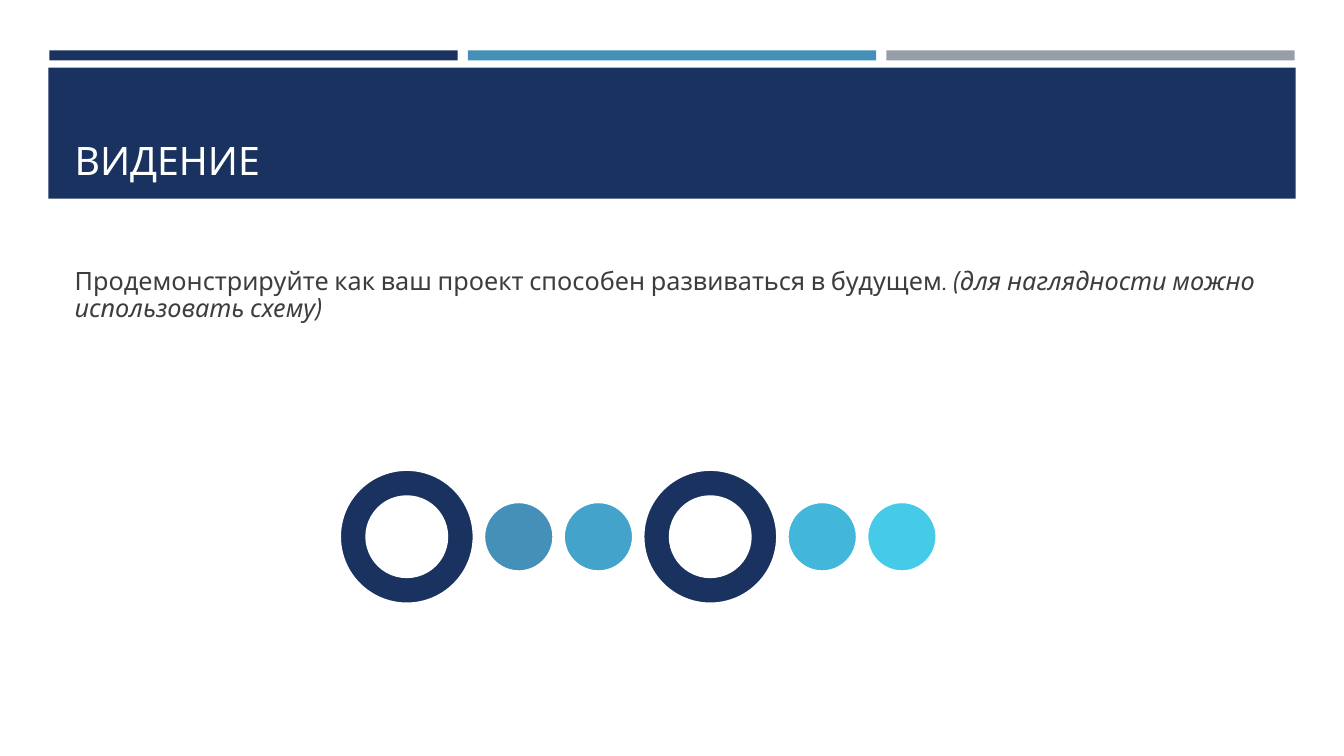
from dataclasses import dataclass

from pptx import Presentation
from pptx.dml.color import RGBColor
from pptx.enum.shapes import MSO_SHAPE
from pptx.enum.text import MSO_ANCHOR, MSO_AUTO_SIZE, PP_ALIGN
from pptx.util import Inches, Pt

RECTANGLE, DONUT, OVAL = MSO_SHAPE.RECTANGLE, MSO_SHAPE.DONUT, MSO_SHAPE.OVAL
BOTTOM, MIDDLE = MSO_ANCHOR.BOTTOM, MSO_ANCHOR.MIDDLE
LEFT_ALIGN, NO_AUTOFIT = PP_ALIGN.LEFT, MSO_AUTO_SIZE.NONE

NAVY = RGBColor(0x1A, 0x32, 0x60)
BLUE = RGBColor(0x45, 0x90, 0xB8)
GRAY = RGBColor(0x96, 0x9F, 0xA7)
SKY = RGBColor(0x43, 0xA3, 0xCA)
AZURE = RGBColor(0x43, 0xB7, 0xDA)
CYAN = RGBColor(0x45, 0xCB, 0xE8)
WHITE = RGBColor(0xFF, 0xFF, 0xFF)
INK = RGBColor(0x3D, 0x3D, 0x3D)

FONT = "Cabin"
SECTION_LAYOUT = 2
BAR_LEFT, BAR_STEP = 0.49, 4.15
CHAIN_LEFT, CHAIN_MIDDLE, CHAIN_GAP = 3.37, 5.325, 0.1


@dataclass(frozen=True)
class Area:
    left: float
    top: float
    width: float
    height: float


@dataclass(frozen=True)
class Link:
    kind: MSO_SHAPE
    size: float
    color: RGBColor


@dataclass(frozen=True)
class Span:
    text: str
    italic: bool = False


CHAIN = (
    Link(DONUT, 1.33, NAVY),
    Link(OVAL, 0.69, BLUE),
    Link(OVAL, 0.69, SKY),
    Link(DONUT, 1.33, NAVY),
    Link(OVAL, 0.69, AZURE),
    Link(OVAL, 0.69, CYAN),
)


def add_filled(shapes, kind: MSO_SHAPE, area: Area, color: RGBColor):
    """Add a flat shape without outline or shadow."""
    shape = shapes.add_shape(kind, Inches(area.left), Inches(area.top),
                             Inches(area.width), Inches(area.height))
    shape.shadow.inherit = False
    shape.fill.solid()
    shape.fill.fore_color.rgb = color
    shape.line.fill.background()
    return shape


def fill_placeholder(box, area: Area, anchor: MSO_ANCHOR, spans: tuple[Span, ...],
                     size: int, color: RGBColor, spacing: dict) -> None:
    """Move a placeholder and write one formatted paragraph into it."""
    for side in ("left", "top", "width", "height"):
        setattr(box, side, Inches(getattr(area, side)))
    frame_format = {"word_wrap": True, "auto_size": NO_AUTOFIT,
                    "vertical_anchor": anchor}
    for name, value in frame_format.items():
        setattr(box.text_frame, name, value)
    para = box.text_frame.paragraphs[0]
    for name, value in {"alignment": LEFT_ALIGN, **spacing}.items():
        setattr(para, name, value)
    for span in spans:
        run = para.add_run()
        run.text = span.text
        font_format = {"name": FONT, "size": Pt(size), "bold": False,
                       "italic": span.italic}
        for name, value in font_format.items():
            setattr(run.font, name, value)
        run.font.color.rgb = color


def add_chain(page) -> None:
    """Place the rings and dots left to right on a common middle line."""
    group = page.shapes.add_group_shape()
    left = CHAIN_LEFT
    for link in CHAIN:
        area = Area(left, CHAIN_MIDDLE - link.size / 2, link.size, link.size)
        shape = add_filled(group.shapes, link.kind, area, link.color)
        shape.line.color.rgb = WHITE
        shape.line.width = Pt(1.75)
        if link.kind == DONUT:
            shape.adjustments[0] = 0.2
        left += link.size + CHAIN_GAP


def main() -> None:
    deck = Presentation()
    deck.slide_width, deck.slide_height = Inches(13.33), Inches(7.5)
    page = deck.slides.add_slide(deck.slide_layouts[SECTION_LAYOUT])
    title, body = page.placeholders
    page_tree = title.element.getparent()

    # Header bars and band, kept behind the text
    for index, color in enumerate((NAVY, BLUE, GRAY)):
        bar = Area(BAR_LEFT + index * BAR_STEP, 0.5, 4.05, 0.1)
        add_filled(page.shapes, RECTANGLE, bar, color)
    add_filled(page.shapes, RECTANGLE, Area(0.48, 0.67, 12.37, 1.3), NAVY)
    for box in (title, body):
        page_tree.append(box.element)

    # Title and body text
    fill_placeholder(title, Area(0.64, 0.77, 12.06, 1.11), BOTTOM,
                     (Span("ВИДЕНИЕ"),), 28, WHITE, {"line_spacing": 0.9})
    fill_placeholder(
        body, Area(0.64, 2.38, 12.06, 1.11), MIDDLE,
        (Span("Продемонстрируйте как ваш проект способен развиваться в будущем"),
         Span(". (для наглядности можно использовать схему)", italic=True)),
        18, INK,
        {"line_spacing": 0.9, "space_before": Pt(3.6), "space_after": Pt(6)})

    # Development scheme
    add_chain(page)
    deck.save("out.pptx")


if __name__ == "__main__":
    main()
